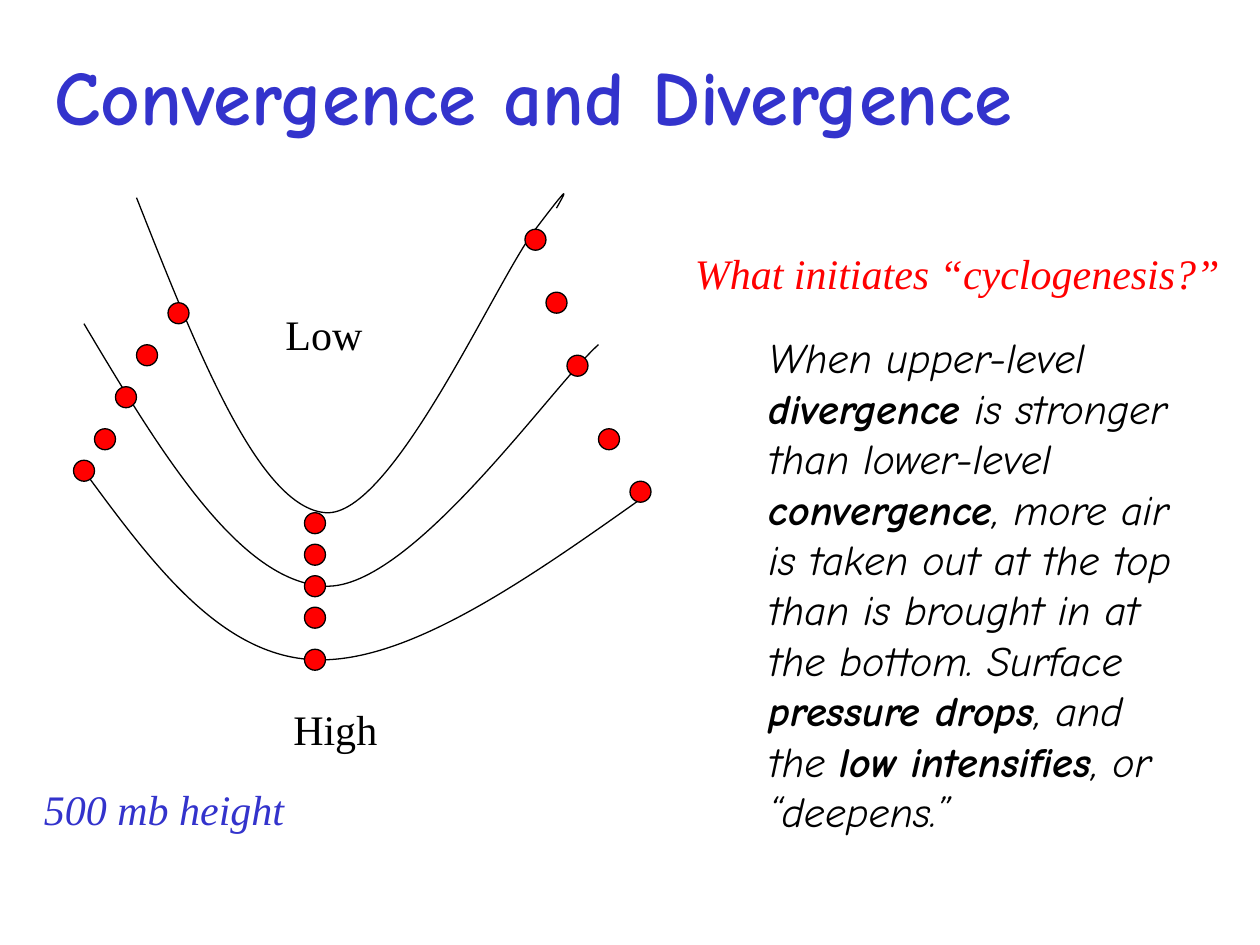
from dataclasses import dataclass
from typing import Any

from lxml import etree
from pptx import Presentation
from pptx.dml.color import RGBColor
from pptx.enum.shapes import MSO_SHAPE
from pptx.enum.text import MSO_ANCHOR, MSO_AUTO_SIZE, PP_ALIGN
from pptx.oxml.ns import qn
from pptx.util import Pt

OVAL = MSO_SHAPE.OVAL
LEFT = PP_ALIGN.LEFT
TOP, MIDDLE = MSO_ANCHOR.TOP, MSO_ANCHOR.MIDDLE
NO_AUTOFIT, GROW = MSO_AUTO_SIZE.NONE, MSO_AUTO_SIZE.SHAPE_TO_FIT_TEXT

BLACK = RGBColor(0x00, 0x00, 0x00)
RED = RGBColor(0xFF, 0x00, 0x00)
BLUE = RGBColor(0x33, 0x33, 0xCC)

SERIF = "Times New Roman"
COMIC = "Comic Neue"
PARCEL_SIZE = 12

Point = tuple[float, float]


@dataclass(frozen=True)
class Label:
    text: str
    left: float
    top: float
    width: float
    color: RGBColor = BLACK
    italic: bool = False
    wrap: bool = False


@dataclass(frozen=True)
class Contour:
    start: Point
    curve: list[Point]


CONTOURS = [
    Contour((78, 113), [
        (113, 201.5), (148, 290), (186, 293),
        (224, 296), (283.5, 160), (306, 131),
        (328, 102), (323, 110), (318, 119),
    ]),
    Contour((48, 185), [
        (92, 259), (137, 333), (186, 335),
        (235, 337), (316, 220), (342, 197),
    ]),
    Contour((48, 269), [
        (87, 322), (126, 375), (180, 377),
        (234, 379), (303, 330), (372, 281),
    ]),
]

AIR_PARCELS = [
    (96, 173), (78, 197), (66, 221), (54, 245), (42, 263),
    (174, 371), (174, 347), (174, 329), (174, 311), (174, 293),
    (300, 131), (312, 167), (324, 203), (342, 245), (360, 275),
]

SIDE_LABELS = [
    Label("What initiates “cyclogenesis?”", 390, 138, 319, RED, True, True),
    Label("500 mb height", 18, 444, 152, BLUE, True),
]

PRESSURE_LABELS = [
    Label("Low", 156, 173, 59),
    Label("High", 160.5, 398.5, 63),
]

EXPLANATION = [
    ("When upper-level ", False),
    ("divergence", True),
    (" is stronger than lower-level ", False),
    ("convergence", True),
    (", more air is taken out at the top than is brought in at the bottom. Surface ", False),
    ("pressure drops", True),
    (", and the ", False),
    ("low intensifies", True),
    (", or “deepens.”", False),
]


def apply_format(target: Any, values: dict[str, Any]) -> None:
    for name, value in values.items():
        setattr(target, name, value)


def add_run(paragraph: Any, text: str, color: RGBColor, **values: Any) -> None:
    run = paragraph.add_run()
    run.text = text
    apply_format(run.font, values)
    run.font.color.rgb = color


def place(shape: Any, left: float, top: float, width: float, height: float) -> None:
    apply_format(shape, {"left": Pt(left), "top": Pt(top),
                         "width": Pt(width), "height": Pt(height)})


def outline(shape: Any) -> None:
    shape.shadow.inherit = False
    shape.line.color.rgb = BLACK
    shape.line.width = Pt(0.75)


def bend_segments(freeform: Any) -> None:
    lines = list(freeform._element.iter(qn("a:lnTo")))
    for index in range(0, len(lines), 3):
        first, *others = lines[index:index + 3]
        bend = etree.Element(qn("a:cubicBezTo"))
        first.addprevious(bend)
        for line in (first, *others):
            bend.append(line[0])
            line.getparent().remove(line)


def draw_contour(shapes: Any, contour: Contour) -> None:
    x, y = contour.start
    builder = shapes.build_freeform(Pt(x), Pt(y))
    builder.add_line_segments([(Pt(x), Pt(y)) for x, y in contour.curve], close=False)
    height_line = builder.convert_to_shape()
    bend_segments(height_line)
    height_line.fill.background()
    outline(height_line)


def draw_parcel(shapes: Any, left: float, top: float) -> None:
    parcel = shapes.add_shape(
        OVAL, Pt(left), Pt(top), Pt(PARCEL_SIZE), Pt(PARCEL_SIZE))
    parcel.fill.solid()
    parcel.fill.fore_color.rgb = RED
    outline(parcel)


def draw_label(shapes: Any, label: Label) -> None:
    frame = shapes.add_textbox(
        Pt(label.left), Pt(label.top), Pt(label.width), Pt(36)).text_frame
    apply_format(frame, {"word_wrap": label.wrap, "auto_size": GROW})
    add_run(frame.paragraphs[0], label.text, label.color,
            name=SERIF, size=Pt(24), italic=label.italic)


def fill_title(title: Any) -> None:
    place(title, 24, 24, 672, 60)
    apply_format(title.text_frame, {"auto_size": NO_AUTOFIT, "vertical_anchor": MIDDLE})
    heading = title.text_frame.paragraphs[0]
    heading.alignment = LEFT
    add_run(heading, "Convergence and Divergence", BLUE,
            name=COMIC, size=Pt(44), bold=True)


def fill_explanation(body: Any) -> None:
    place(body, 432, 186, 247, 323)
    apply_format(body.text_frame, {"auto_size": NO_AUTOFIT, "vertical_anchor": TOP})
    paragraph = body.text_frame.paragraphs[0]
    properties = paragraph._p.get_or_add_pPr()
    properties.set("marL", "0")
    properties.set("indent", "0")
    etree.SubElement(properties, qn("a:buNone"))
    apply_format(paragraph, {"alignment": LEFT, "space_before": Pt(0)})
    for text, bold in EXPLANATION:
        add_run(paragraph, text, BLACK, name=COMIC, size=Pt(24), italic=True, bold=bold)


def main() -> None:
    deck = Presentation()
    apply_format(deck, {"slide_width": Pt(720), "slide_height": Pt(540)})
    slide = deck.slides.add_slide(deck.slide_layouts[1])
    fill_title(slide.shapes.title)
    fill_explanation(slide.placeholders[1])
    for label in SIDE_LABELS:
        draw_label(slide.shapes, label)
    trough = slide.shapes.add_group_shape().shapes
    for contour in CONTOURS:
        draw_contour(trough, contour)
    for label in PRESSURE_LABELS:
        draw_label(trough, label)
    for left, top in AIR_PARCELS:
        draw_parcel(trough, left, top)
    deck.save("out.pptx")


if __name__ == "__main__":
    main()
